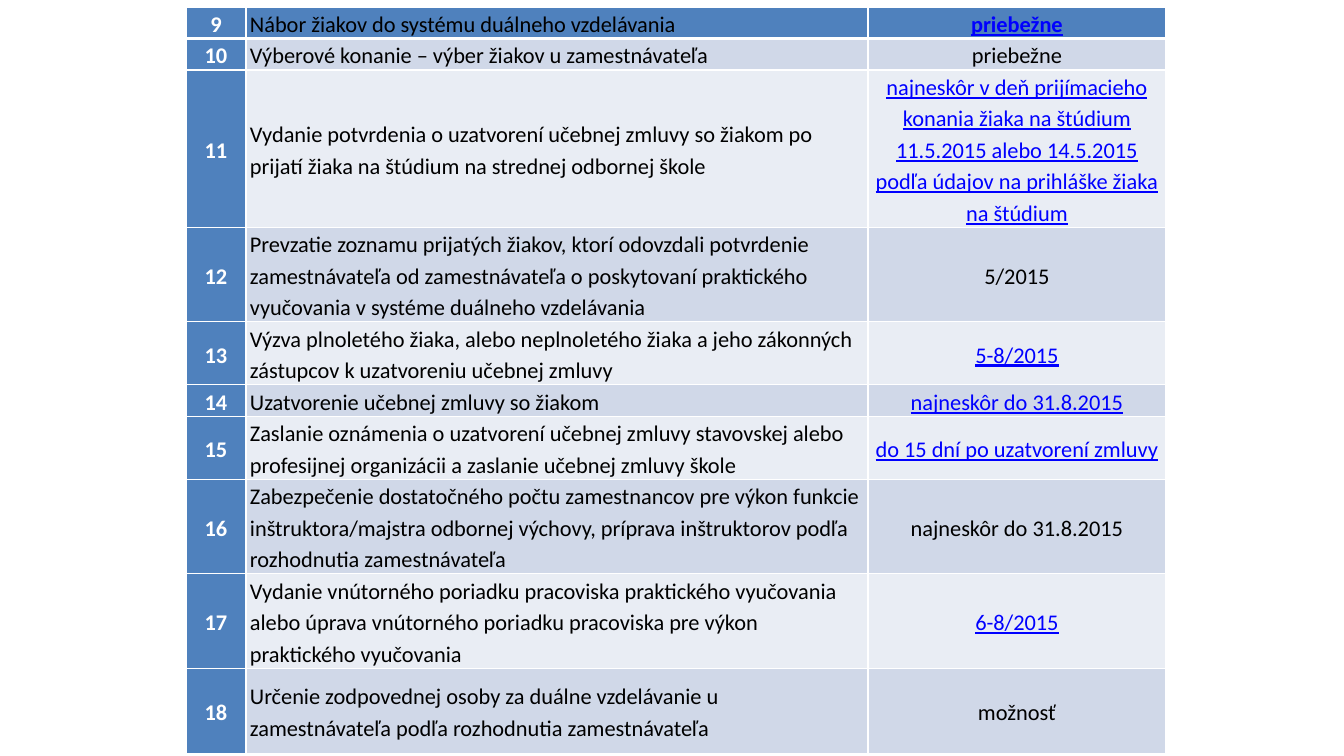
from dataclasses import dataclass

from lxml.etree import SubElement
from pptx import Presentation
from pptx.dml.color import RGBColor
from pptx.enum.text import MSO_ANCHOR, PP_ALIGN
from pptx.oxml.ns import qn
from pptx.util import Emu, Pt


@dataclass(frozen=True)
class Theme:
    """Colours, font and sizes of the slide."""

    accent: str = "4F81BD"
    bands: tuple = ("E9EDF4", "D0D8E8")
    white: str = "FFFFFF"
    black: str = "000000"
    link: str = "0000FF"
    font: str = "Calibri"
    size: int = 16
    line_spacing: float = 1.15
    space_after: int = 10
    thin: int = 1
    thick: int = 3


THEME = Theme()
EMU_PER_PX = 914400 / 100.8
SLIDE_SIZE = (1344, 756)
TABLE_BOX = (186, 7, 980, 696)
COL_WIDTHS = (60, 622, 298)
CELL_INSET = 4
FIRST_NUMBER = 9

# Row height, task, deadline, deadline is highlighted, space after the task
TASKS = [
    (28, "Nábor žiakov do systému duálneho vzdelávania", "priebežne", True, False),
    (28, "Výberové konanie – výber žiakov u zamestnávateľa", "priebežne", False, False),
    (147, "Vydanie potvrdenia o uzatvorení učebnej zmluvy so žiakom po prijatí žiaka "
          "na štúdium na strednej odbornej škole",
     "najneskôr v deň prijímacieho konania žiaka na štúdium 11.5.2015 alebo 14.5.2015 "
     "podľa údajov na prihláške žiaka na štúdium", True, False),
    (88, "Prevzatie zoznamu prijatých žiakov, ktorí odovzdali potvrdenie zamestnávateľa "
         "od zamestnávateľa o poskytovaní praktického vyučovania v systéme duálneho "
         "vzdelávania", "5/2015", False, False),
    (58, "Výzva plnoletého žiaka, alebo neplnoletého žiaka a jeho zákonných zástupcov "
         "k uzatvoreniu učebnej zmluvy", "5-8/2015", True, False),
    (28, "Uzatvorenie učebnej zmluvy so žiakom", "najneskôr do 31.8.2015", True, False),
    (58, "Zaslanie oznámenia o uzatvorení učebnej zmluvy stavovskej alebo profesijnej "
         "organizácii a zaslanie učebnej zmluvy škole",
     "do 15 dní po uzatvorení zmluvy", True, False),
    (88, "Zabezpečenie dostatočného počtu zamestnancov pre výkon funkcie "
         "inštruktora/majstra odbornej výchovy, príprava inštruktorov podľa rozhodnutia "
         "zamestnávateľa", "najneskôr do 31.8.2015", False, True),
    (88, "Vydanie vnútorného poriadku pracoviska praktického vyučovania alebo úprava "
         "vnútorného poriadku pracoviska pre výkon praktického vyučovania",
     "6-8/2015", True, True),
    (85, "Určenie zodpovednej osoby za duálne vzdelávanie u zamestnávateľa podľa "
         "rozhodnutia zamestnávateľa", "možnosť", False, True),
]


def px(length):
    """Turn a length in px into EMU."""
    return Emu(round(length * EMU_PER_PX))


def set_borders(cell, top, bottom):
    """Draw white cell borders with the given top and bottom widths."""
    tc_pr = cell._tc.get_or_add_tcPr()
    widths = {"L": THEME.thin, "R": THEME.thin, "T": top, "B": bottom}
    for side, width in widths.items():
        ln = SubElement(tc_pr, qn(f"a:ln{side}"), w=str(Pt(width)))
        fill = SubElement(ln, qn("a:solidFill"))
        SubElement(fill, qn("a:srgbClr"), val=THEME.white)


def fill_cell(cell, text, fill, color, align=PP_ALIGN.CENTER, bold=False,
              underline=False, space_after=0):
    """Write one formatted paragraph into a cell and fill its background."""
    cell.fill.solid()
    cell.fill.fore_color.rgb = RGBColor.from_string(fill)
    cell.vertical_anchor = MSO_ANCHOR.MIDDLE
    cell.margin_left = cell.margin_right = px(CELL_INSET)
    cell.margin_top = cell.margin_bottom = 0
    p = cell.text_frame.paragraphs[0]
    p.alignment = align
    p.line_spacing = THEME.line_spacing
    p.space_after = Pt(space_after)
    r = p.add_run()
    r.text = text
    r.font.name = THEME.font
    r.font.size = Pt(THEME.size)
    r.font.bold = bold
    r.font.underline = underline
    r.font.color.rgb = RGBColor.from_string(color)


def add_schedule(slide, box):
    """Place the table of numbered tasks and deadlines in the box."""
    frame = slide.shapes.add_table(len(TASKS), len(COL_WIDTHS), *map(px, box))
    table = frame.table
    for column, width in zip(table.columns, COL_WIDTHS):
        column.width = px(width)
    for i, (height, task, deadline, highlighted, spaced) in enumerate(TASKS):
        row = table.rows[i]
        row.height = px(height)
        top = THEME.thick if i == 1 else THEME.thin
        bottom = THEME.thick if i == 0 else THEME.thin
        for cell in row.cells:
            set_borders(cell, top, bottom)
        number_cell, task_cell, deadline_cell = row.cells
        fill = THEME.accent if i == 0 else THEME.bands[i % 2]
        fill_cell(number_cell, str(FIRST_NUMBER + i), THEME.accent, THEME.white, bold=True)
        fill_cell(task_cell, task, fill, THEME.black, PP_ALIGN.LEFT,
                  space_after=THEME.space_after if spaced else 0)
        fill_cell(deadline_cell, deadline, fill,
                  THEME.link if highlighted else THEME.black,
                  bold=i == 0, underline=highlighted)


def main():
    """Build the slide and save it."""
    prs = Presentation()
    prs.slide_width, prs.slide_height = map(px, SLIDE_SIZE)
    slide = prs.slides.add_slide(prs.slide_layouts[6])
    add_schedule(slide, TABLE_BOX)
    prs.save("out.pptx")


if __name__ == "__main__":
    main()
